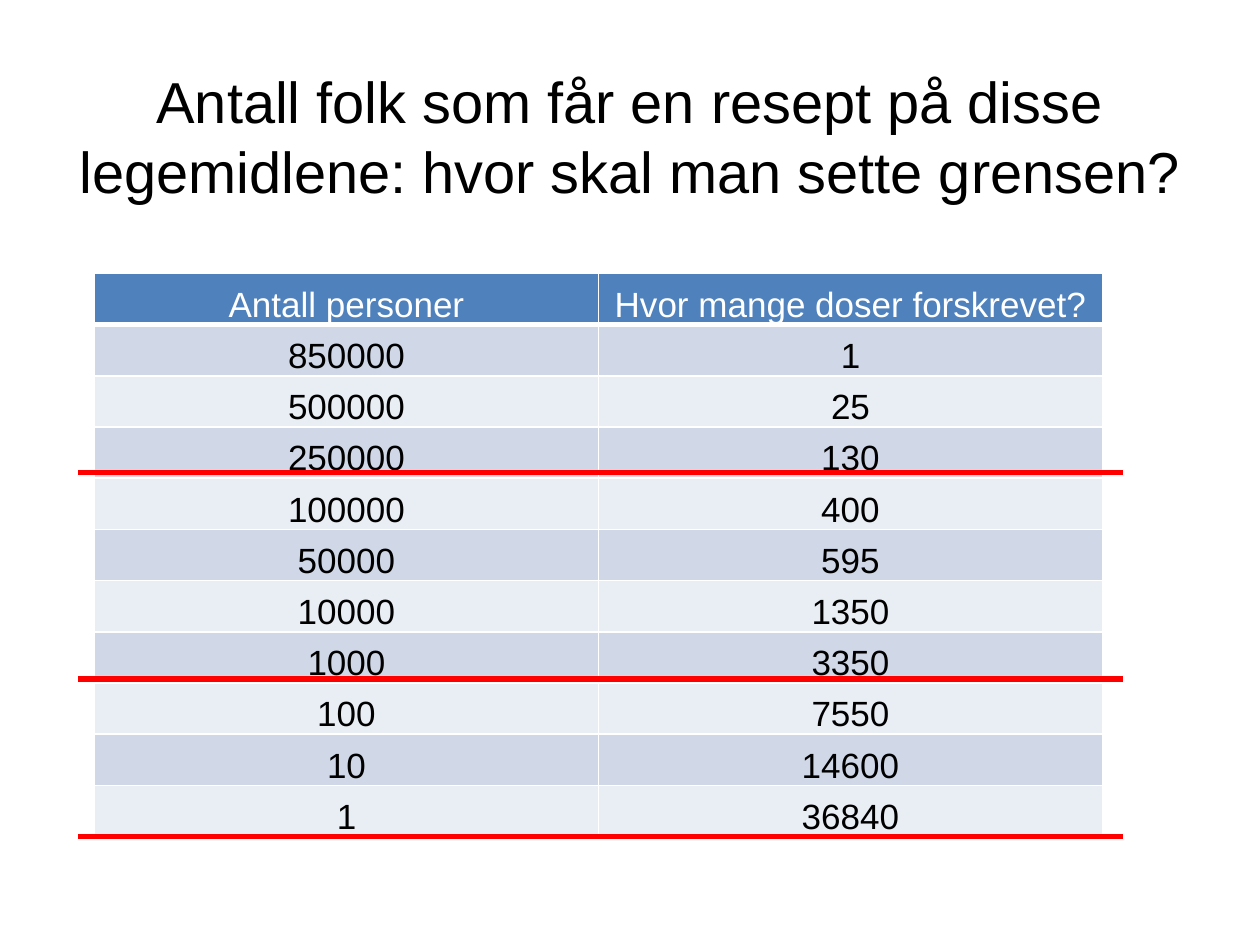
from lxml import etree
from pptx import Presentation
from pptx.dml.color import RGBColor
from pptx.enum.shapes import MSO_CONNECTOR
from pptx.enum.text import MSO_ANCHOR, PP_ALIGN
from pptx.oxml import parse_xml
from pptx.oxml.ns import nsdecls, qn
from pptx.util import Inches, Pt

TITLE = ("Antall folk som får en resept på disse legemidlene: "
         "hvor skal man sette grensen?")
ROWS = [
    ("Antall personer", "Hvor mange doser forskrevet?"),
    ("850000", "1"),
    ("500000", "25"),
    ("250000", "130"),
    ("100000", "400"),
    ("50000", "595"),
    ("10000", "1350"),
    ("1000", "3350"),
    ("100", "7550"),
    ("10", "14600"),
    ("1", "36840"),
]
LIMITS = [3.75, 5.39, 6.64]  # heights of the red cut-off lines

BLACK = RGBColor(0x00, 0x00, 0x00)
WHITE = RGBColor(0xFF, 0xFF, 0xFF)
RED = RGBColor(0xFF, 0x00, 0x00)
HEAD = RGBColor(0x4F, 0x81, 0xBD)
BANDS = [RGBColor(0xE9, 0xED, 0xF4), RGBColor(0xD0, 0xD8, 0xE8)]

FONT = "Arial"
STRAIGHT = MSO_CONNECTOR.STRAIGHT
CENTER = PP_ALIGN.CENTER
MIDDLE, BOTTOM = MSO_ANCHOR.MIDDLE, MSO_ANCHOR.BOTTOM

WIDE, HIGH = 10, 7.5
LEFT, TOP, TAB_W, TAB_H = 0.75, 2.17, 8, 4.47
LINE_L, LINE_R = 0.62, 8.91


def put(frame, text, size=20, color=BLACK):
    para = frame.paragraphs[0]
    para.alignment = CENTER
    run = para.add_run()
    run.text = text
    run.font.name = FONT
    run.font.size = Pt(size)
    run.font.color.rgb = color


def edge(cell, **widths):
    """Give the cell white borders, with widths in points by side."""
    props = cell._tc.get_or_add_tcPr()
    for spot, side in enumerate("LRTB"):
        props.insert(spot, parse_xml(
            f'<a:ln{side} {nsdecls("a")} w="{Pt(widths.get(side, 1))}">'
            f'<a:solidFill><a:srgbClr val="{WHITE}"/></a:solidFill></a:ln{side}>'))


def add_title(slide):
    box = slide.shapes.add_textbox(
        Inches(0.5), Inches(0.45), Inches(WIDE - 1), Inches(1.25))
    frame = box.text_frame
    frame.word_wrap = True
    frame.vertical_anchor = MIDDLE
    put(frame, TITLE, size=33)


def add_grid(slide):
    grid = slide.shapes.add_table(
        len(ROWS), len(ROWS[0]), Inches(LEFT), Inches(TOP),
        Inches(TAB_W), Inches(TAB_H)).table
    for r, row in enumerate(ROWS):
        grid.rows[r].height = Inches(TAB_H / len(ROWS))
        for c, text in enumerate(row):
            cell = grid.cell(r, c)
            cell.vertical_anchor = BOTTOM
            cell.margin_left = cell.margin_right = cell.margin_top = Inches(0.01)
            cell.margin_bottom = 0
            cell.fill.solid()
            cell.fill.fore_color.rgb = BANDS[r % 2] if r else HEAD
            edge(cell, T=3 if r == 1 else 1, B=1 if r else 3)
            put(cell.text_frame, text, color=BLACK if r else WHITE)


def add_limit(slide, y):
    line = slide.shapes.add_connector(
        STRAIGHT, Inches(LINE_L), Inches(y), Inches(LINE_R), Inches(y))
    line.line.color.rgb = RED
    line.line.width = Pt(3)
    etree.SubElement(line._element.spPr, qn("a:effectLst"))


def main():
    deck = Presentation()
    deck.slide_width, deck.slide_height = Inches(WIDE), Inches(HIGH)
    slide = deck.slides.add_slide(deck.slide_layouts[6])
    add_grid(slide)
    for y in LIMITS:
        add_limit(slide, y)
    add_title(slide)
    deck.save("out.pptx")


if __name__ == "__main__":
    main()
